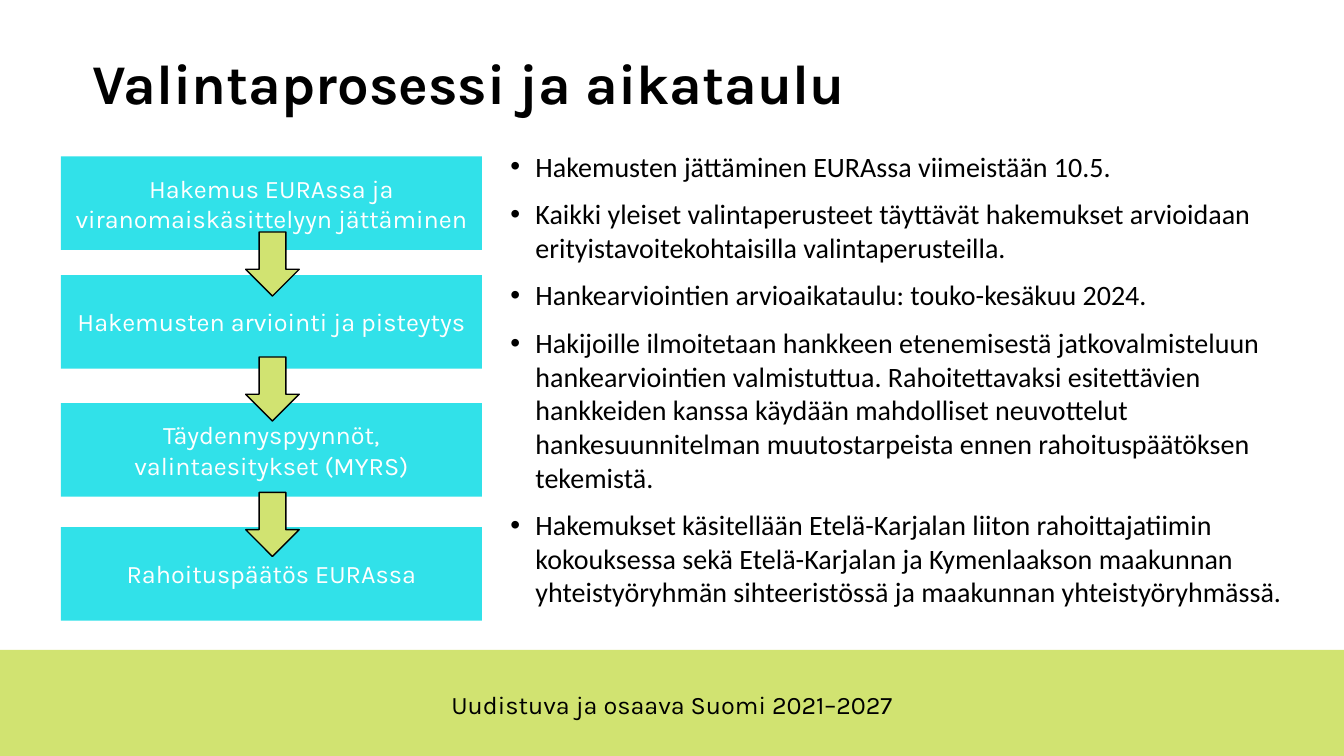
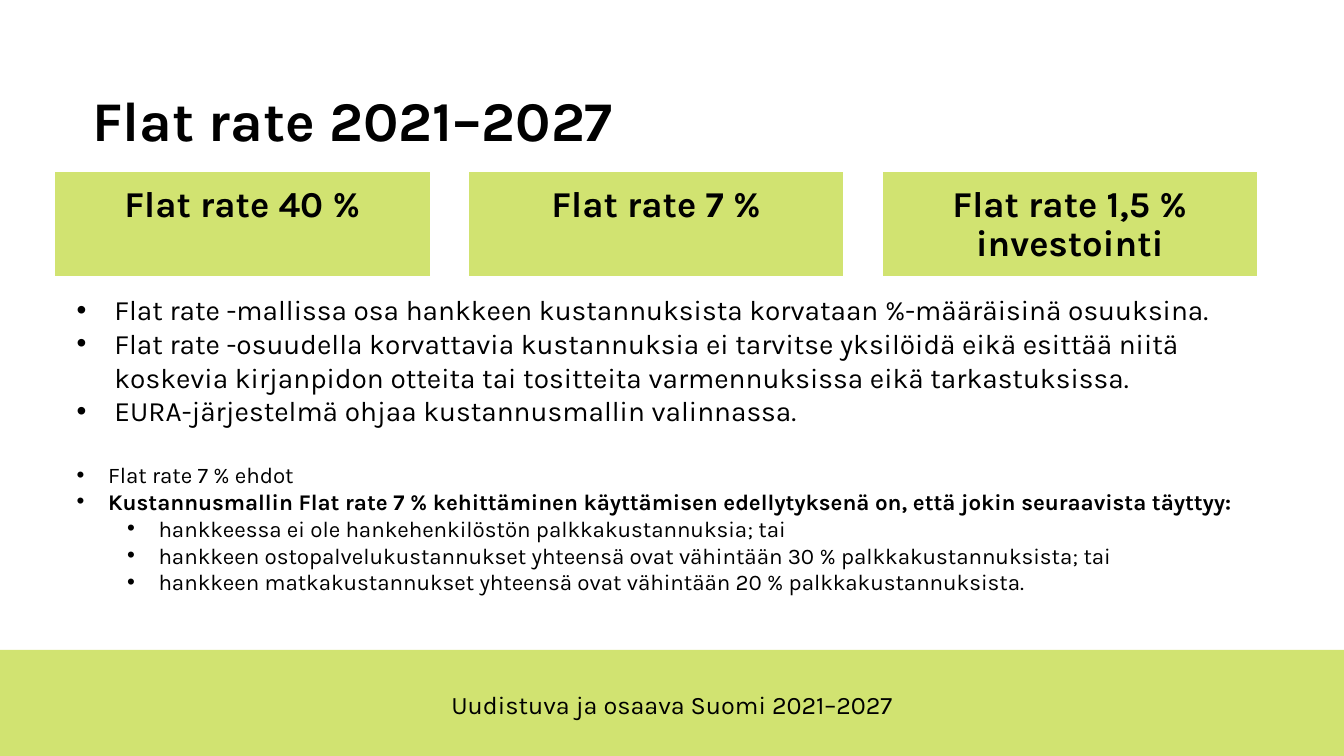
from lxml.etree import SubElement
from pptx import Presentation
from pptx.dml.color import RGBColor
from pptx.enum.shapes import MSO_SHAPE as SHAPE
from pptx.enum.text import MSO_ANCHOR as ANCHOR, PP_ALIGN as ALIGN
from pptx.oxml.ns import qn
from pptx.util import Pt

PX = 9525
LIME, CYAN, BLACK, WHITE = "D1E371", "31E1E9", "000000", "FFFFFF"
color = RGBColor.from_string


def write(shape, texts, size, font_name="Karla", text_color=BLACK, bold=False, anchor=ANCHOR.TOP,
          insets=(0, 0), indent=0, left=0, start=0, **formats):
    frame = shape.text_frame
    across, down = (inset * PX for inset in insets)
    frame_formats = dict(word_wrap=True, vertical_anchor=anchor, margin_left=across,
                         margin_right=across, margin_top=down, margin_bottom=down)
    for name, value in frame_formats.items():
        setattr(frame, name, value)
    for index, text in enumerate(texts, start):
        paragraph = frame.add_paragraph() if index else frame.paragraphs[0]
        paragraph.text = text
        if indent:
            properties = paragraph._p.get_or_add_pPr()
            properties.set("marL", str((left + indent) * PX))
            properties.set("indent", str(-indent * PX))
            SubElement(properties, qn("a:buFont"), typeface="Arial")
            SubElement(properties, qn("a:buChar"), char="•")
        for name, value in formats.items():
            if index or name != "space_before":
                setattr(paragraph, name, value)
        for name, value in dict(name=font_name, size=Pt(size), bold=bold).items():
            setattr(paragraph.font, name, value)
        paragraph.font.color.rgb = color(text_color)


def add_block(slide, kind, box, fill, line=None):
    shape = slide.shapes.add_shape(kind, *(length * PX for length in box))
    shape.shadow.inherit = False
    shape.fill.solid()
    shape.fill.fore_color.rgb = color(fill)
    if line:
        shape.line.color.rgb = color(line)
        shape.line.width = Pt(1)
    else:
        shape.line.fill.background()
    return shape


presentation = Presentation()
presentation.slide_width = 1280 * PX
presentation.slide_height = 720 * PX

slides = []
for title, title_top in [("Valintaprosessi ja aikataulu", 3), ("Flat rate 2021–2027", 38)]:
    slide = presentation.slides.add_slide(presentation.slide_layouts[6])
    add_block(slide, SHAPE.RECTANGLE, (0, 619, 1280, 101), LIME)
    footer = slide.shapes.add_textbox(312 * PX, 656 * PX, 656 * PX, 29 * PX)
    write(footer, ["Uudistuva ja osaava Suomi 2021–2027"], 18,
          anchor=ANCHOR.MIDDLE, alignment=ALIGN.CENTER)
    heading = slide.shapes.add_textbox(88 * PX, title_top * PX, 1104 * PX, 108 * PX)
    write(heading, [title], 40, bold=True, anchor=ANCHOR.BOTTOM, line_spacing=0.9)
    slides.append(slide)
process_slide, rate_slide = slides

schedule = process_slide.shapes.add_textbox(486 * PX, 142 * PX, 737 * PX, 394 * PX)
write(schedule, [
    "Hakemusten jättäminen EURAssa viimeistään 10.5.",
    "Kaikki yleiset valintaperusteet täyttävät hakemukset arvioidaan "
    "erityistavoitekohtaisilla valintaperusteilla.",
    "Hankearviointien arvioaikataulu: touko-kesäkuu 2024.",
    "Hakijoille ilmoitetaan hankkeen etenemisestä jatkovalmisteluun hankearviointien "
    "valmistuttua. Rahoitettavaksi esitettävien hankkeiden kanssa käydään mahdolliset "
    "neuvottelut hankesuunnitelman muutostarpeista ennen rahoituspäätöksen tekemistä.",
    "Hakemukset käsitellään Etelä-Karjalan liiton rahoittajatiimin kokouksessa sekä "
    "Etelä-Karjalan ja Kymenlaakson maakunnan yhteistyöryhmän sihteeristössä ja "
    "maakunnan yhteistyöryhmässä.",
], 20, font_name="Calibri", indent=24, space_before=Pt(10))

steps = [
    (149, "Hakemus EURAssa ja viranomaiskäsittelyyn jättäminen"),
    (262, "Hakemusten arviointi ja pisteytys"),
    (384, "Täydennyspyynnöt, valintaesitykset (MYRS)"),
    (502, "Rahoituspäätös EURAssa"),
]
for top, text in steps:
    step = add_block(process_slide, SHAPE.RECTANGLE, (58, top, 401, 89), CYAN)
    write(step, [text], 18, text_color=WHITE, anchor=ANCHOR.MIDDLE, insets=(10, 5),
          alignment=ALIGN.CENTER)
for top in (221, 340, 469):
    add_block(process_slide, SHAPE.DOWN_ARROW, (234, top, 51, 61), LIME, BLACK)

rates = ["Flat rate 40 %", "Flat rate 7 %", "Flat rate 1,5 % investointi"]
for column, rate in enumerate(rates):
    card = add_block(rate_slide, SHAPE.RECTANGLE, (52 + 394 * column, 163, 358, 101), LIME, WHITE)
    write(card, [rate], 26, bold=True, insets=(14, 14), alignment=ALIGN.CENTER, line_spacing=0.9)

terms = rate_slide.shapes.add_textbox(73 * PX, 279 * PX, 1115 * PX, 317 * PX)
write(terms, [
    "Flat rate -mallissa osa hankkeen kustannuksista korvataan %-määräisinä osuuksina.",
    "Flat rate -osuudella korvattavia kustannuksia ei tarvitse yksilöidä eikä esittää niitä "
    "koskevia kirjanpidon otteita tai tositteita varmennuksissa eikä tarkastuksissa.",
    "EURA-järjestelmä ohjaa kustannusmallin valinnassa.",
], 20, indent=36)
write(terms, ["Flat rate 7 % ehdot"], 16, indent=30, start=3, space_before=Pt(24))
write(terms, ["Kustannusmallin Flat rate 7 % kehittäminen käyttämisen edellytyksenä on, "
              "että jokin seuraavista täyttyy:"], 16, bold=True, indent=30, start=4)
write(terms, [
    "hankkeessa ei ole hankehenkilöstön palkkakustannuksia; tai",
    "hankkeen ostopalvelukustannukset yhteensä ovat vähintään 30 % palkkakustannuksista; tai",
    "hankkeen matkakustannukset yhteensä ovat vähintään 20 % palkkakustannuksista.",
], 16, indent=30, left=48, start=5, level=1)

presentation.save("out.pptx")
